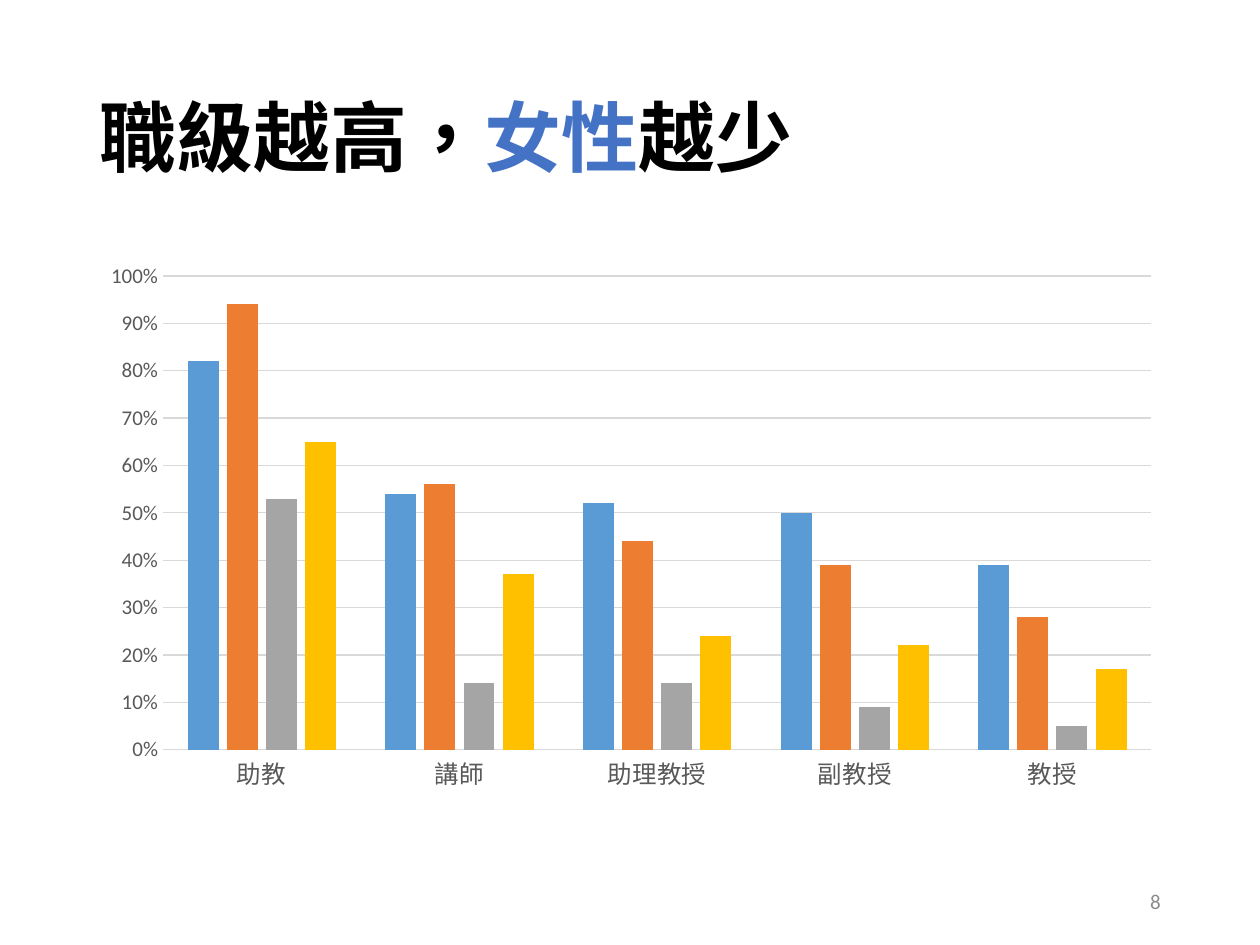
"""Build a slide charting the share of staff at each academic rank in four groups."""
import lxml.etree
import pptx
import pptx.chart.data
import pptx.dml.color
import pptx.enum.chart
import pptx.enum.text
import pptx.oxml.ns
import pptx.util

Inches = pptx.util.Inches
RGBColor = pptx.dml.color.RGBColor
ALIGN = pptx.enum.text.PP_ALIGN
TICK_MARK = pptx.enum.chart.XL_TICK_MARK
qn = pptx.oxml.ns.qn

BLACK = RGBColor(0x00, 0x00, 0x00)
ACCENT = RGBColor(0x44, 0x72, 0xC4)
NUMBER_GRAY = RGBColor(0x8C, 0x8C, 0x8C)
LABEL_GRAY = RGBColor(0x59, 0x59, 0x59)
RULE_GRAY = RGBColor(0xD9, 0xD9, 0xD9)
BLUE = RGBColor(0x5B, 0x9B, 0xD5)
ORANGE = RGBColor(0xED, 0x7D, 0x31)
GRAY = RGBColor(0xA5, 0xA5, 0xA5)
YELLOW = RGBColor(0xFF, 0xC0, 0x00)
LATIN = "Calibri"
CJK = "Noto Sans CJK SC"

HEADLINE = [("職級越高，", BLACK), ("女性", ACCENT), ("越少", BLACK)]
PAGE_NUMBER = [("8", NUMBER_GRAY)]
RANKS = ["助教", "講師", "助理教授", "副教授", "教授"]
SHARES = [
    (BLUE, (0.82, 0.54, 0.52, 0.50, 0.39)),
    (ORANGE, (0.94, 0.56, 0.44, 0.39, 0.28)),
    (GRAY, (0.53, 0.14, 0.14, 0.09, 0.05)),
    (YELLOW, (0.65, 0.37, 0.24, 0.22, 0.17)),
]
MARGIN, CONTENT_WIDTH = 0.69, 8.62
PLOT_AREA = {"x": 0.07, "y": 0.04, "w": 0.91, "h": 0.79}


def style_font(font, size, color, name, bold=False):
    font.size = pptx.util.Pt(size)
    font.bold = bold
    font.color.rgb = color
    font.name = name
    if name == CJK:
        font._rPr.set("lang", "zh-TW")
        lxml.etree.SubElement(font._rPr, qn("a:ea")).set("typeface", name)


def style_line(line, color):
    line.color.rgb = color
    line.width = pptx.util.Pt(0.75)


def add_text(slide, box, runs, size, name, align, bold=False, spacing=None):
    frame = slide.shapes.add_textbox(*map(Inches, box)).text_frame
    frame.word_wrap = True
    frame.vertical_anchor = pptx.enum.text.MSO_ANCHOR.MIDDLE
    paragraph = frame.paragraphs[0]
    paragraph.alignment = align
    paragraph.line_spacing = spacing
    for words, color in runs:
        run = paragraph.add_run()
        run.text = words
        style_font(run.font, size, color, name, bold)


def fix_plot_area(chart):
    plot_area = chart._chartSpace.find(".//" + qn("c:plotArea"))
    for old_layout in plot_area.findall(qn("c:layout")):
        plot_area.remove(old_layout)
    layout = lxml.etree.Element(qn("c:layout"))
    plot_area.insert(0, layout)
    manual = lxml.etree.SubElement(layout, qn("c:manualLayout"))
    settings = {"layoutTarget": "inner", "xMode": "edge", "yMode": "edge", **PLOT_AREA}
    for tag, value in settings.items():
        lxml.etree.SubElement(manual, qn("c:" + tag)).set("val", str(value))


def add_rank_chart(slide):
    rank_shares = pptx.chart.data.CategoryChartData(number_format="0%")
    rank_shares.categories = RANKS
    for _, values in SHARES:
        rank_shares.add_series("", values)
    box = map(Inches, (MARGIN, 2, CONTENT_WIDTH, 4.76))
    kind = pptx.enum.chart.XL_CHART_TYPE.COLUMN_CLUSTERED
    chart = slide.shapes.add_chart(kind, *box, rank_shares).chart
    chart.has_title = False
    chart.has_legend = False
    style_font(chart.font, 10, BLACK, LATIN)
    fix_plot_area(chart)

    bars = chart.plots[0]
    bars.gap_width = 160
    bars.overlap = -26
    bars.vary_by_categories = False
    for series, (color, _) in zip(bars.series, SHARES):
        series.format.fill.solid()
        series.format.fill.fore_color.rgb = color

    rank_axis, share_axis = chart.category_axis, chart.value_axis
    for axis, size, name in ((rank_axis, 14, CJK), (share_axis, 12, LATIN)):
        axis.major_tick_mark = axis.minor_tick_mark = TICK_MARK.NONE
        style_font(axis.tick_labels.font, size, LABEL_GRAY, name)
    style_line(rank_axis.format.line, RULE_GRAY)
    share_axis.format.line.fill.background()
    share_axis.minimum_scale, share_axis.maximum_scale = 0, 1
    share_axis.major_unit = 0.1
    share_axis.tick_labels.number_format = "0%"
    share_axis.tick_labels.number_format_is_linked = False
    style_line(share_axis.major_gridlines.format.line, RULE_GRAY)


def main():
    deck = pptx.Presentation()
    deck.slide_width, deck.slide_height = Inches(10), Inches(7.5)
    slide = deck.slides.add_slide(deck.slide_layouts[6])
    add_text(slide, (MARGIN, 0.4, CONTENT_WIDTH, 1.45), HEADLINE, 44, CJK,
             ALIGN.LEFT, bold=True, spacing=0.9)
    add_text(slide, (7.06, 6.95, 2.25, 0.4), PAGE_NUMBER, 12, LATIN, ALIGN.RIGHT)
    add_rank_chart(slide)
    deck.save("out.pptx")


if __name__ == "__main__":
    main()
